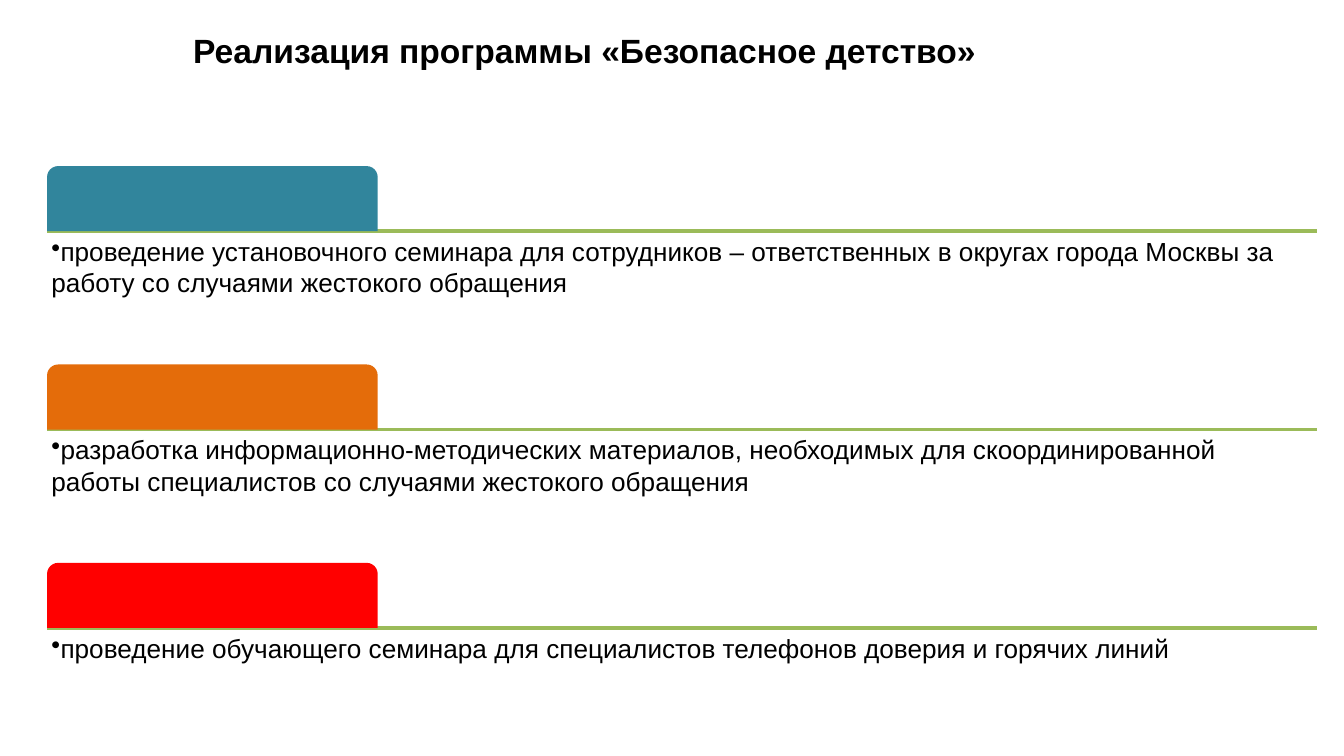
import pptx
import pptx.util
import pptx.dml.color
import pptx.enum.shapes
import pptx.enum.text
import pptx.oxml.ns
from lxml import etree

Cm, Pt = pptx.util.Cm, pptx.util.Pt
Kind = pptx.enum.shapes.MSO_SHAPE
Anchor = pptx.enum.text.MSO_ANCHOR
Align = pptx.enum.text.PP_ALIGN
qn = pptx.oxml.ns.qn

COLORS = {"text": "000000", "rule": "9BBB59", "teal": "31859C",
          "orange": "E46C0A", "red": "FF0000"}

# Rows: tab colour and text
ROWS = [
    ("teal", "проведение установочного семинара для сотрудников – ответственных "
             "в округах города Москвы за работу со случаями жестокого обращения"),
    ("orange", "разработка информационно-методических материалов, необходимых для "
               "скоординированной работы специалистов со случаями жестокого обращения"),
    ("red", "проведение обучающего семинара для специалистов телефонов доверия "
            "и горячих линий"),
]

# Grid in centimetres
LEFT, WIDTH = 0.89, 24
TOP, STEP = 4.37, 3.75
TAB_W, TAB_H, TEXT_H = 6.25, 1.23, 2.46


def color(name):
    return pptx.dml.color.RGBColor.from_string(COLORS[name])


def apply(item, values):
    for name, value in values.items():
        setattr(item, name, value)


class Deck:
    font = {"name": "Arial", "size": Pt(14), "bold": False}
    inset = dict.fromkeys(
        ("margin_left", "margin_top", "margin_right", "margin_bottom"), Cm(0.08))

    def __init__(self, slide):
        self.slide = slide
        self.group = None

    def style(self, para, **extra):
        apply(para.font, {**self.font, **extra})
        para.font.color.rgb = color("text")

    def title(self, text, x, y, w, h):
        box = self.slide.shapes.title
        apply(box, {"left": Cm(x), "top": Cm(y), "width": Cm(w), "height": Cm(h)})
        frame = box.text_frame
        frame.text = text
        frame.vertical_anchor = Anchor.MIDDLE
        para = frame.paragraphs[0]
        para.alignment = Align.CENTER
        self.style(para, size=Pt(18), bold=True)

    def start(self):
        self.group = self.slide.shapes.add_group_shape().shapes

    def rule(self, x, y, w):
        line = self.group.add_connector(
            pptx.enum.shapes.MSO_CONNECTOR.STRAIGHT, Cm(x), Cm(y), Cm(x + w), Cm(y))
        line.line.color.rgb = color("rule")
        line.line.width = Pt(2)
        etree.SubElement(line._element.spPr, qn("a:effectLst"))

    def tab(self, x, y, w, h, fill):
        shape = self.group.add_shape(
            Kind.ROUND_2_SAME_RECTANGLE, Cm(x), Cm(y), Cm(w), Cm(h))
        shape.adjustments[0] = 0.17
        shape.shadow.inherit = False
        shape.fill.solid()
        shape.fill.fore_color.rgb = color(fill)
        shape.line.fill.background()

    def bullet(self, x, y, w, h, text):
        frame = self.group.add_textbox(Cm(x), Cm(y), Cm(w), Cm(h)).text_frame
        apply(frame, {**self.inset, "word_wrap": True, "vertical_anchor": Anchor.TOP})
        para = frame.paragraphs[0]
        para.text = text
        para.level = 1
        props = para._p.get_or_add_pPr()
        props.set("marL", "0")
        props.set("indent", "0")
        etree.SubElement(props, qn("a:buChar"), char="•")
        self.style(para)


def main():
    show = pptx.Presentation()
    apply(show, {"slide_width": Cm(25.4), "slide_height": Cm(14.29)})
    deck = Deck(show.slides.add_slide(show.slide_layouts[5]))

    # Title
    deck.title("Реализация программы «Безопасное детство»", 0, 0.15, 22.1, 1.6)

    # Rules lie behind the tabs and texts
    deck.start()
    spots = [TOP + STEP * i for i in range(len(ROWS))]
    for y in reversed(spots):
        deck.rule(LEFT, y, WIDTH)

    # Tabs and texts
    for y, (fill, text) in zip(spots, ROWS):
        deck.tab(LEFT, y - TAB_H, TAB_W, TAB_H, fill)
        deck.bullet(LEFT, y, WIDTH, TEXT_H, text)

    show.save("out.pptx")


if __name__ == "__main__":
    main()
